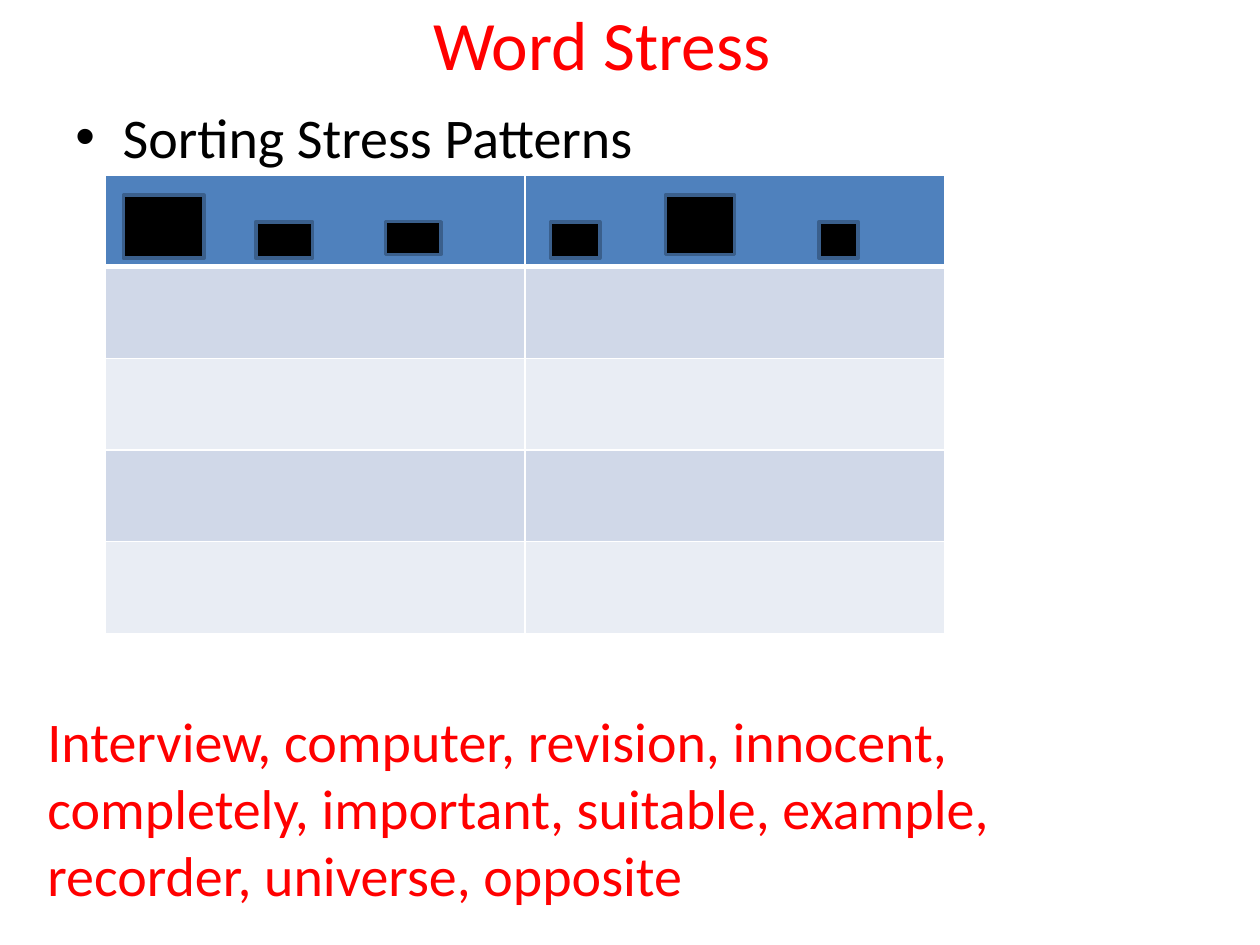
from lxml.etree import SubElement
from pptx import Presentation
from pptx.dml.color import RGBColor
from pptx.enum.shapes import MSO_SHAPE
from pptx.enum.text import MSO_ANCHOR, MSO_AUTO_SIZE, PP_ALIGN
from pptx.oxml.ns import qn
from pptx.util import Pt

TITLE = "Word Stress"
TASK = "Sorting Stress Patterns"
WORDS = [
    "Interview, computer, revision, innocent, completely, important, suitable, example,",
    "recorder, universe, opposite",
]
RED, BLACK, WHITE = "FF0000", "000000", "FFFFFF"
HEADER, BANDS = "4F81BD", ["D0D8E8", "E9EDF4"]
SYLLABLE_LINE = "3A5F8C"
ROWS, COLUMNS = 5, 2
COLUMN_WIDTH, ROW_HEIGHT = 240, 52.4
SYLLABLES = [
    (70.56, 111.6, 46.08, 36),
    (146.16, 126.72, 32.4, 20.88),
    (220.32, 126.72, 31.68, 18.72),
    (314.64, 126.72, 28.08, 20.88),
    (380.16, 111.6, 39.6, 33.84),
    (468, 126.72, 22.32, 20.88),
]


def color(value):
    return RGBColor.from_string(value)


def paint(fill, value):
    fill.solid()
    fill.fore_color.rgb = color(value)


def write(frame, lines, size, value):
    frame.text = "\n".join(lines)
    frame.word_wrap = True
    for para in frame.paragraphs:
        para.font.name = "Calibri"
        para.font.size = Pt(size)
        para.font.color.rgb = color(value)


def add_text(page, place, lines, size, value):
    box = page.shapes.add_textbox(*map(Pt, place))
    write(box.text_frame, lines, size, value)
    return box


def add_bullet(para, indent):
    properties = para._p.get_or_add_pPr()
    properties.set("marL", str(Pt(indent)))
    properties.set("indent", str(-Pt(indent)))
    SubElement(properties, qn("a:buFont"), typeface="Arial")
    SubElement(properties, qn("a:buChar"), char="•")


def add_borders(cell, widths):
    properties = cell._tc.get_or_add_tcPr()
    for side, width in zip("LRTB", widths):
        line = SubElement(properties, qn(f"a:ln{side}"), w=str(Pt(width)))
        fill = SubElement(line, qn("a:solidFill"))
        SubElement(fill, qn("a:srgbClr"), val=WHITE)


def add_grid(page):
    table = page.shapes.add_table(
        ROWS, COLUMNS, Pt(60), Pt(100),
        Pt(COLUMNS * COLUMN_WIDTH), Pt(ROWS * ROW_HEIGHT),
    ).table
    for column in table.columns:
        column.width = Pt(COLUMN_WIDTH)
    for index, row in enumerate(table.rows):
        row.height = Pt(ROW_HEIGHT)
        top = 3 if index == 1 else 1
        bottom = 3 if index == 0 else 1
        for cell in row.cells:
            add_borders(cell, (1, 1, top, bottom))
            paint(cell.fill, BANDS[(index - 1) % 2] if index else HEADER)


def add_syllable(page, place):
    shape = page.shapes.add_shape(MSO_SHAPE.RECTANGLE, *map(Pt, place))
    shape.shadow.inherit = False
    paint(shape.fill, BLACK)
    shape.line.color.rgb = color(SYLLABLE_LINE)
    shape.line.width = Pt(2)


def main():
    deck = Presentation()
    deck.slide_width, deck.slide_height = Pt(720), Pt(540)
    page = deck.slides.add_slide(deck.slide_layouts[5])

    title = page.shapes.title
    title.left, title.top, title.width, title.height = map(Pt, (20, 0, 648, 49))
    write(title.text_frame, [TITLE], 39.6, RED)
    title.text_frame.auto_size = MSO_AUTO_SIZE.NONE
    title.text_frame.vertical_anchor = MSO_ANCHOR.MIDDLE
    title.text_frame.paragraphs[0].alignment = PP_ALIGN.CENTER

    task = add_text(page, (36, 55, 648, 427.5), [TASK], 32, BLACK)
    add_bullet(task.text_frame.paragraphs[0], 27)
    add_grid(page)
    for place in SYLLABLES:
        add_syllable(page, place)
    add_text(page, (20, 400, 680, 124), WORDS, 32, RED)

    deck.save("out.pptx")


if __name__ == "__main__":
    main()
